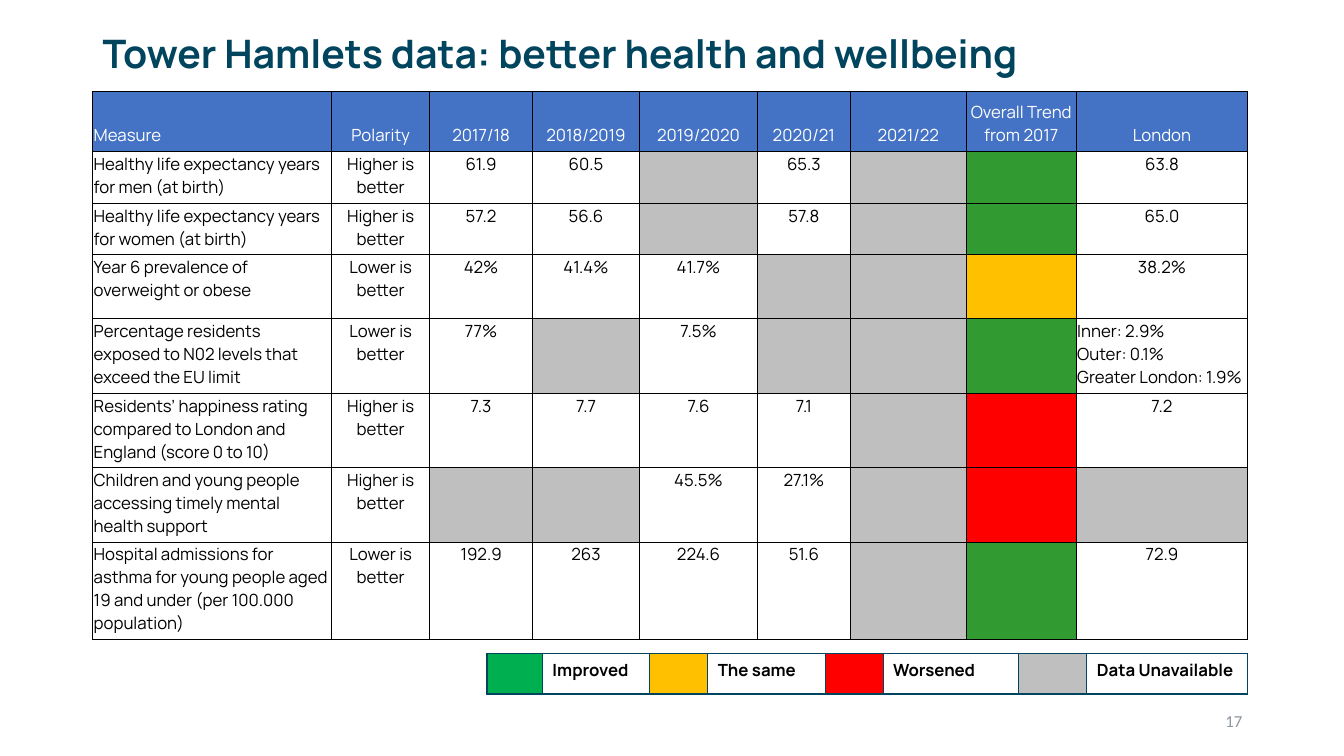
from dataclasses import dataclass
from enum import Enum

from lxml.etree import SubElement
from pptx import Presentation
from pptx.dml.color import RGBColor
from pptx.enum.text import MSO_ANCHOR, PP_ALIGN
from pptx.oxml.ns import qn
from pptx.util import Inches, Pt


class Status(Enum):
    IMPROVED = "319B31"
    IMPROVED_KEY = "00B050"
    SAME = "FFC000"
    WORSENED = "FF0000"
    UNAVAILABLE = "BFBFBF"


@dataclass(frozen=True)
class Theme:
    heading_font: str = "Manrope"
    number_font: str = "Calibri"
    title_size: int = 28
    body_size: int = 12
    navy: str = "00445E"
    header: str = "4472C4"
    white: str = "FFFFFF"
    black: str = "000000"
    grey: str = "8C949D"


THEME = Theme()
LEFT, CENTER, RIGHT = PP_ALIGN.LEFT, PP_ALIGN.CENTER, PP_ALIGN.RIGHT
UP, SAME, DOWN, NONE = Status.IMPROVED, Status.SAME, Status.WORSENED, Status.UNAVAILABLE
HIGHER, LOWER = "Higher is better", "Lower is better"

MEASURES = [
    ["Measure", "Polarity", "2017/18", "2018/2019", "2019/2020", "2020/21", "2021/22",
     "Overall Trend from 2017", "London"],
    ["Healthy life expectancy years for men (at birth)", HIGHER,
     "61.9", "60.5", NONE, "65.3", NONE, UP, "63.8"],
    ["Healthy life expectancy years for women (at birth)", HIGHER,
     "57.2", "56.6", NONE, "57.8", NONE, UP, "65.0"],
    ["Year 6 prevalence of overweight or obese", LOWER,
     "42%", "41.4%", "41.7%", NONE, NONE, SAME, "38.2%"],
    ["Percentage residents exposed to N02 levels that exceed the EU limit", LOWER,
     "77%", NONE, "7.5%", NONE, NONE, UP,
     "Inner: 2.9%\nOuter: 0.1%\nGreater London: 1.9%"],
    ["Residents’ happiness rating compared to London and England (score 0 to 10)", HIGHER,
     "7.3", "7.7", "7.6", "7.1", NONE, DOWN, "7.2"],
    ["Children and young people accessing timely mental health support", HIGHER,
     NONE, NONE, "45.5%", "27.1%", NONE, DOWN, NONE],
    ["Hospital admissions for asthma for young people aged 19 and under "
     "(per 100.000 population)", LOWER,
     "192.9", "263", "224.6", "51.6", NONE, UP, "72.9"],
]
MEASURE_COLUMNS = [2.37, 0.97, 1.02, 1.06, 1.17, 0.92, 1.15, 1.09, 1.7]
MEASURE_ROWS = [0.6, 0.51, 0.51, 0.64, 0.74, 0.74, 0.74, 0.97]

TREND_KEY = [[Status.IMPROVED_KEY, "Improved", SAME, "The same", DOWN, "Worsened"]]
TREND_COLUMNS = [0.55, 1.06, 0.58, 1.17, 0.57, 1.34]
MISSING_KEY = [[NONE, "Data Unavailable"]]
MISSING_COLUMNS = [0.68, 1.59]


def apply(target, values):
    for name, value in values.items():
        setattr(target, name, value)


class SlideBuilder:
    def __init__(self, deck, theme):
        self.deck, self.theme = deck, theme
        self.page = deck.slides.add_slide(deck.slide_layouts[6])

    def area(self, left, top, width, height):
        """Turn percentages of the slide into a box of lengths."""
        across, down = self.deck.slide_width, self.deck.slide_height
        return [int(share * side / 100) for share, side in
                ((left, across), (top, down), (width, across), (height, down))]

    def fill_text(self, frame, text, align=LEFT, color=None, font=None, size=None,
                  bold=False, spacing=1.0):
        frame.text = text
        for para in frame.paragraphs:
            apply(para, {"alignment": align, "line_spacing": spacing})
            for span in para.runs:
                apply(span.font, {"name": font or self.theme.heading_font,
                                  "size": Pt(size or self.theme.body_size),
                                  "bold": bold})
                span.font.color.rgb = RGBColor.from_string(color or self.theme.black)

    def label(self, share, text, **style):
        box = self.page.shapes.add_textbox(*self.area(*share))
        apply(box.text_frame, {"word_wrap": True, "vertical_anchor": MSO_ANCHOR.MIDDLE})
        self.fill_text(box.text_frame, text, **style)

    def border(self, cell, color, points):
        properties = cell._tc.get_or_add_tcPr()
        for side in ("lnL", "lnR", "lnT", "lnB"):
            line = SubElement(properties, qn(f"a:{side}"), w=str(Pt(points)))
            fill = SubElement(line, qn("a:solidFill"))
            SubElement(fill, qn("a:srgbClr"), val=color)

    def table(self, share, columns, rows, content, line, style_cell):
        """Draw a table whose columns and rows divide the area by weight."""
        area = self.area(*share)
        table = self.page.shapes.add_table(len(rows), len(columns), *area).table
        apply(table, {"first_row": False, "horz_banding": False})
        for column, weight in zip(table.columns, columns):
            column.width = int(area[2] * weight / sum(columns))
        for row, weight in zip(table.rows, rows):
            row.height = int(area[3] * weight / sum(rows))
        for r, values in enumerate(content):
            for c, value in enumerate(values):
                cell = table.cell(r, c)
                self.border(cell, *line)
                cell_format, fill, text_style = style_cell(r, c, value)
                apply(cell, cell_format)
                cell.fill.solid()
                if isinstance(value, Status):
                    fill = value.value
                else:
                    self.fill_text(cell.text_frame, value, **text_style)
                cell.fill.fore_color.rgb = RGBColor.from_string(fill)


def measure_style(row, column, value):
    header = row == 0
    tight = Inches(0.01)
    several_lines = isinstance(value, str) and "\n" in value
    cell_format = {"margin_left": tight, "margin_right": tight, "margin_top": tight,
                   "margin_bottom": Inches(0.05),
                   "vertical_anchor": MSO_ANCHOR.BOTTOM if header else MSO_ANCHOR.TOP}
    text_style = {"align": LEFT if column == 0 or several_lines else CENTER,
                  "color": THEME.white if header else THEME.black}
    return cell_format, THEME.header if header else THEME.white, text_style


def key_style(row, column, value):
    return {"vertical_anchor": MSO_ANCHOR.TOP}, THEME.white, {"bold": True}


def main():
    deck = Presentation()
    apply(deck, {"slide_width": Inches(13.33), "slide_height": Inches(7.5)})
    slide = SlideBuilder(deck, THEME)
    slide.label((6.9, 2.67, 86.27, 9.47), "Tower Hamlets data: better health and wellbeing",
                color=THEME.navy, size=THEME.title_size, bold=True, spacing=0.9)
    slide.table((6.9, 12.1, 85.95, 72.5), MEASURE_COLUMNS, MEASURE_ROWS, MEASURES,
                (THEME.black, 0.5), measure_style)
    for left, width, columns, key in ((36.23, 39.54, TREND_COLUMNS, TREND_KEY),
                                      (75.77, 17.03, MISSING_COLUMNS, MISSING_KEY)):
        slide.table((left, 86.4, width, 5.4), columns, [1], key,
                    (THEME.navy, 1), key_style)
    slide.label((70.67, 92.67, 22.5, 5.33), "17", align=RIGHT, color=THEME.grey,
                font=THEME.number_font)
    deck.save("out.pptx")


if __name__ == "__main__":
    main()
